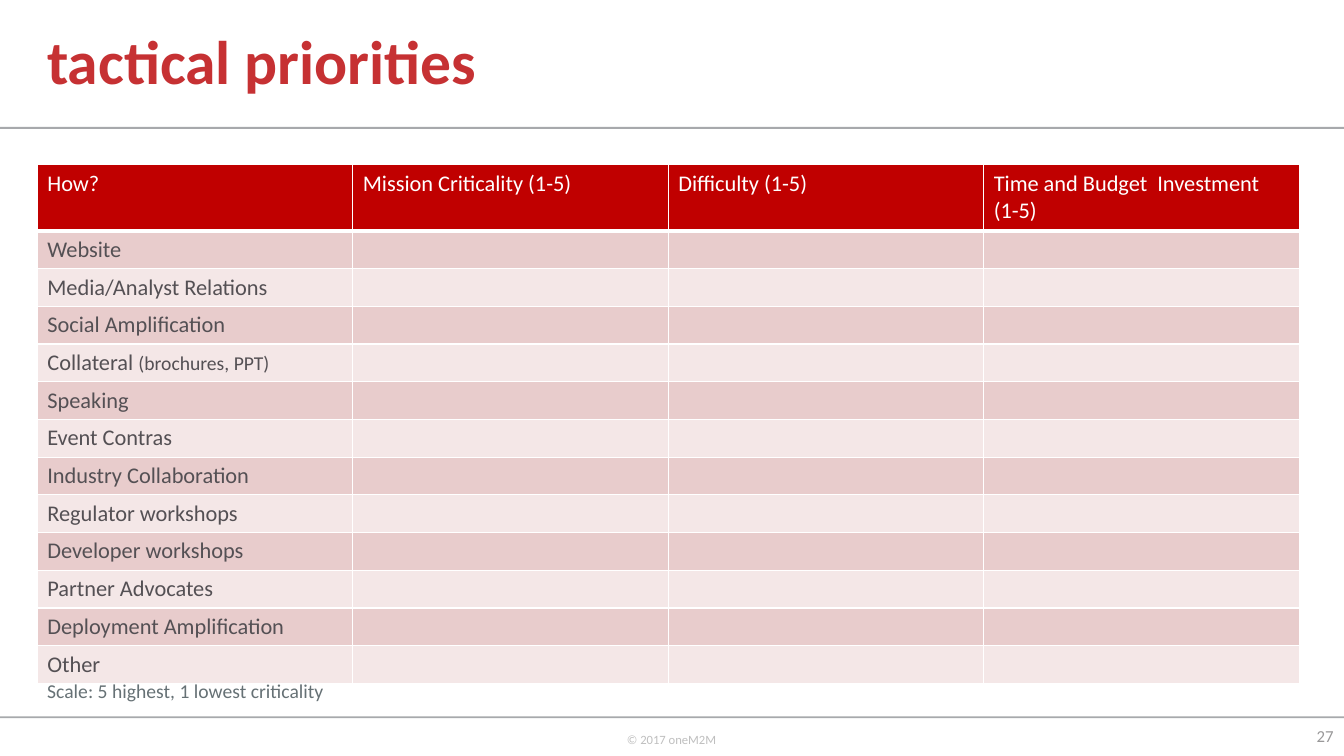
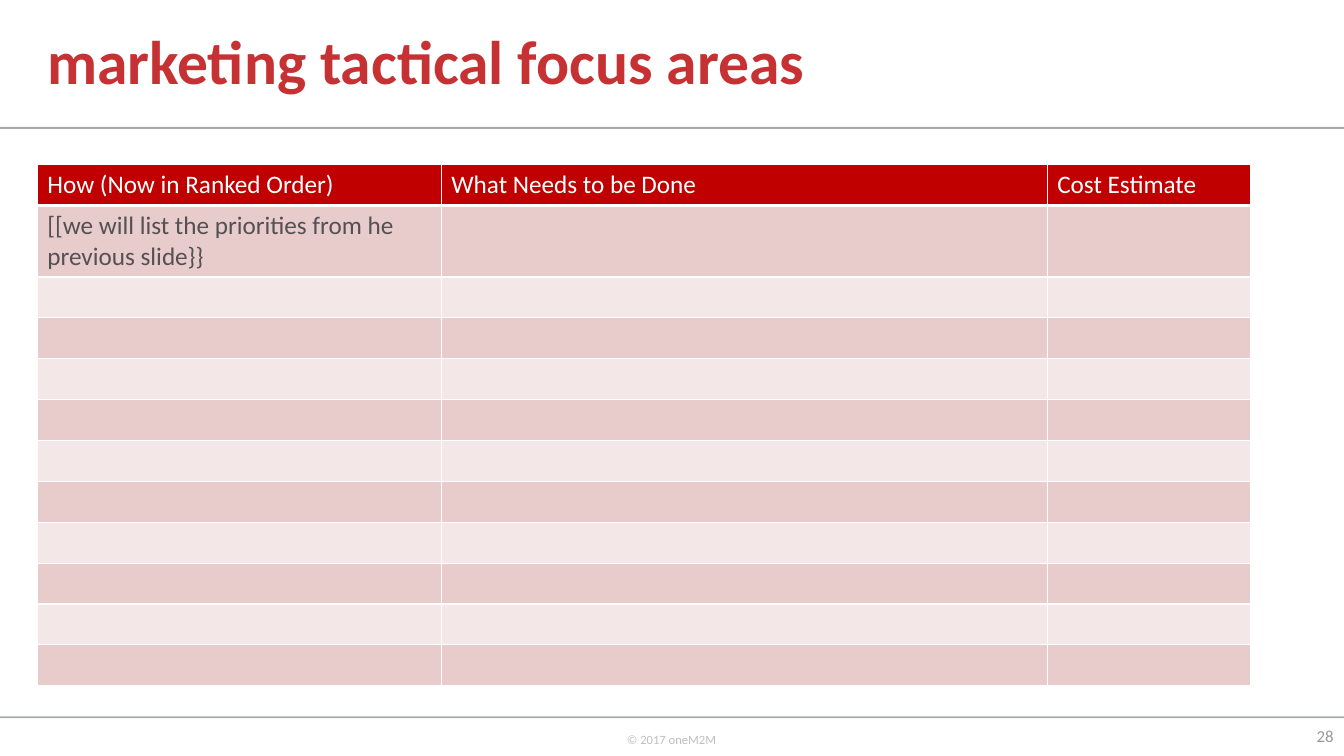
import pptx
import pptx.util
import pptx.dml.color
import pptx.enum.shapes
import pptx.enum.text
import pptx.oxml.ns
import lxml.etree

Cm = pptx.util.Cm
Pt = pptx.util.Pt
RGBColor = pptx.dml.color.RGBColor
Align = pptx.enum.text.PP_ALIGN
Anchor = pptx.enum.text.MSO_ANCHOR
qn = pptx.oxml.ns.qn

FONT = "Calibri"
WHITE = RGBColor(0xFF, 0xFF, 0xFF)
TITLE = RGBColor(0xC6, 0x31, 0x33)
HEAD = RGBColor(0xC0, 0x00, 0x00)
DARK = RGBColor(0xE8, 0xCC, 0xCC)
LIGHT = RGBColor(0xF4, 0xE7, 0xE7)
BODY = RGBColor(0x54, 0x50, 0x54)
NOTE = RGBColor(0x66, 0x71, 0x75)
RULE = RGBColor(0xA7, 0xA9, 0xAC)
FOOT = RGBColor(0xBF, 0xBF, 0xBF)
PAGE = RGBColor(0x99, 0x98, 0x99)

WIDTH = 33.87
LEFT = 0.94
TOP = 4.15


def add_run(para, text, size, color, bold=False):
    run = para.add_run()
    run.text = text
    run.font.name = FONT
    run.font.size = Pt(size)
    run.font.bold = bold
    run.font.color.rgb = color


def add_text(slide, box, text, size, color, bold=False, wrap=True,
             anchor=Anchor.TOP, align=Align.LEFT, space=None):
    frame = slide.shapes.add_textbox(*map(Cm, box)).text_frame
    frame.word_wrap = wrap
    frame.vertical_anchor = anchor
    para = frame.paragraphs[0]
    para.alignment = align
    para.line_spacing = space
    add_run(para, text, size, color, bold)


def add_rule(slide, top):
    kind = pptx.enum.shapes.MSO_SHAPE.RECTANGLE
    rule = slide.shapes.add_shape(kind, 0, Cm(top), Cm(WIDTH), Cm(0.05))
    rule.shadow.inherit = False
    rule.fill.solid()
    rule.fill.fore_color.rgb = RULE
    rule.line.fill.background()


def add_slide(deck, title, page):
    slide = deck.slides.add_slide(deck.slide_layouts[6])
    for top in (3.2, 18.05):
        add_rule(slide, top)
    add_text(slide, (15.55, 18.31, 2.79, 1.02), "© 2017 oneM2M", 9, FOOT, wrap=False)
    add_text(slide, (LEFT, 0, 21.82, 3.25), title, 44, TITLE, bold=True,
             anchor=Anchor.MIDDLE, space=0.9)
    add_text(slide, (32.49, 18.03, 1.37, 1.02), str(page), 12, PAGE,
             anchor=Anchor.MIDDLE, align=Align.RIGHT)
    return slide


def set_edges(cell, base):
    props = cell._tc.get_or_add_tcPr()
    for spot, (side, width) in enumerate((("L", 1), ("R", 1), ("T", 1), ("B", base))):
        line = lxml.etree.Element(qn("a:ln" + side), w=str(Pt(width)))
        fill = lxml.etree.SubElement(line, qn("a:solidFill"))
        lxml.etree.SubElement(fill, qn("a:srgbClr"), val=str(WHITE))
        props.insert(spot, line)


def fill_cell(cell, row, parts, size):
    head = row == 0
    cell.fill.solid()
    cell.fill.fore_color.rgb = HEAD if head else DARK if row % 2 else LIGHT
    set_edges(cell, 3 if head else 1)
    para = cell.text_frame.paragraphs[0]
    for text, points in parts:
        add_run(para, text, points, WHITE if head else BODY)
    lxml.etree.SubElement(para._p, qn("a:endParaRPr"), sz=str(size * 100))


def add_grid(slide, cols, rows, heads, names, size):
    grid = slide.shapes.add_table(len(rows), len(cols), Cm(LEFT), Cm(TOP),
                                  Cm(sum(cols)), Cm(sum(rows))).table
    for col, width in zip(grid.columns, cols):
        col.width = Cm(width)
    for row, height in zip(grid.rows, rows):
        row.height = Cm(height)
    texts = [heads] + [[name] for name in names]
    for r in range(len(rows)):
        for c in range(len(cols)):
            text = texts[r][c] if r < len(texts) and c < len(texts[r]) else []
            parts = [(text, size)] if isinstance(text, str) else text
            fill_cell(grid.cell(r, c), r, parts, size)


def main():
    deck = pptx.Presentation()
    deck.slide_width, deck.slide_height = Cm(WIDTH), Cm(19.05)

    slide = add_slide(deck, "tactical priorities", 27)
    heads = ["How?", "Mission Criticality (1-5)", "Difficulty (1-5)",
             "Time and Budget  Investment (1-5)"]
    names = ["Website", "Media/Analyst Relations", "Social Amplification",
             [("Collateral ", 16), ("(brochures, PPT)", 14)], "Speaking",
             "Event Contras", "Industry Collaboration", "Regulator workshops",
             "Developer workshops", "Partner Advocates",
             "Deployment Amplification", "Other"]
    add_grid(slide, [7.95] * 4, [1.67] + [0.95] * len(names), heads, names, 16)
    add_text(slide, (LEFT, 16.99, 7.85, 0.86),
             "Scale: 5 highest, 1 lowest criticality", 14, NOTE)

    slide = add_slide(deck, "marketing tactical focus areas", 28)
    heads = ["How (Now in Ranked Order)", "What Needs to be Done", "Cost Estimate"]
    names = ["[[we will list the priorities from he previous slide}}"]
    add_grid(slide, [10.18, 15.27, 5.13], [1.03, 1.8] + [1.03] * 10, heads, names, 18)

    deck.save("out.pptx")


if __name__ == "__main__":
    main()
